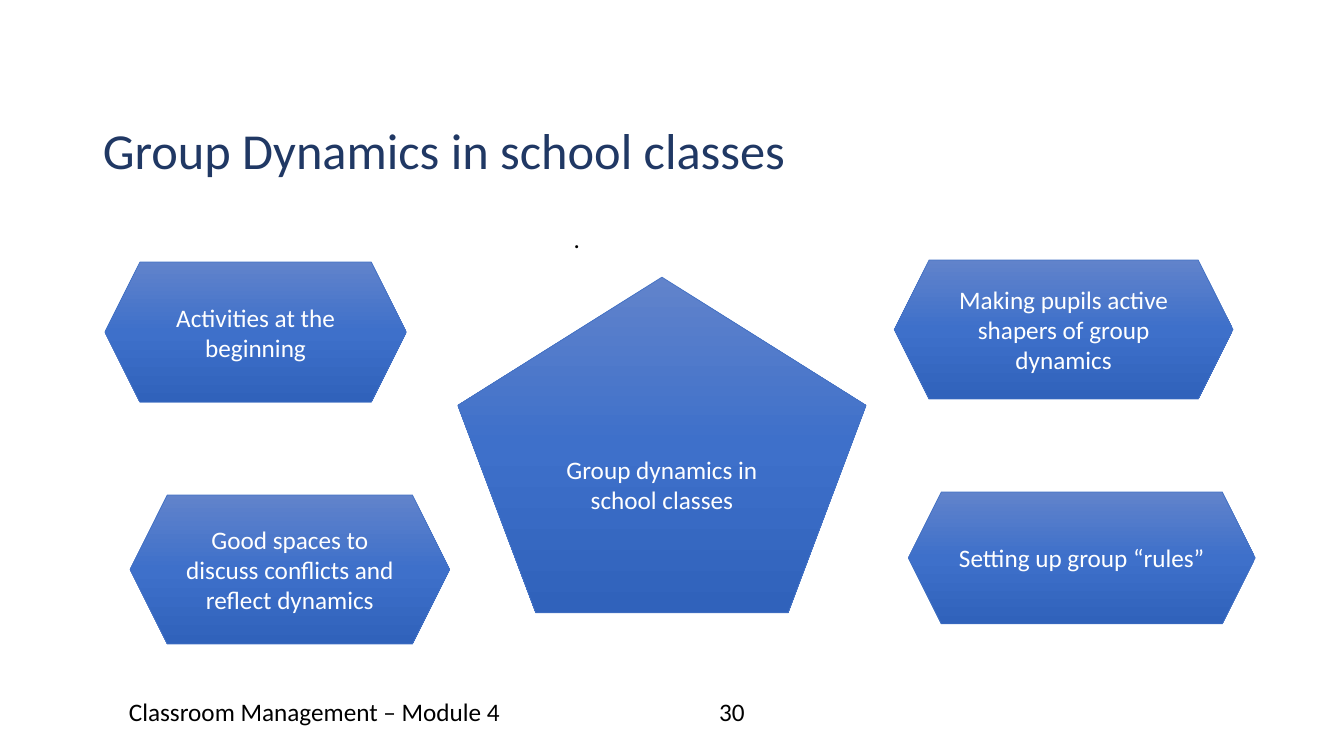
from copy import deepcopy

from pptx import Presentation
from pptx.dml.color import RGBColor
from pptx.enum.shapes import MSO_SHAPE
from pptx.enum.text import MSO_ANCHOR, MSO_AUTO_SIZE, PP_ALIGN
from pptx.util import Inches, Pt

HEXAGON = MSO_SHAPE.HEXAGON
PENTAGON = MSO_SHAPE.REGULAR_PENTAGON
LEFT, CENTER = PP_ALIGN.LEFT, PP_ALIGN.CENTER
TOP, MIDDLE = MSO_ANCHOR.TOP, MSO_ANCHOR.MIDDLE
NO_FIT = MSO_AUTO_SIZE.NONE

NAVY = RGBColor(0x20, 0x38, 0x64)
BLACK = RGBColor(0x00, 0x00, 0x00)
WHITE = RGBColor(0xFF, 0xFF, 0xFF)
OUTLINE = RGBColor(0x44, 0x72, 0xC4)
GRADIENT = [
    (0, RGBColor(0x61, 0x83, 0xCB)),
    (0.5, RGBColor(0x3E, 0x70, 0xCA)),
    (1, RGBColor(0x30, 0x62, 0xBB)),
]

TOPICS = [
    ("Activities at the beginning", (1.04, 2.6, 2.99, 1.39)),
    ("Good spaces to discuss conflicts and reflect dynamics", (1.29, 4.91, 3.17, 1.48)),
    ("Making pupils active shapers of group dynamics", (8.87, 2.58, 3.36, 1.38)),
    ("Setting up group “rules”", (9.01, 4.88, 3.44, 1.31)),
]


class SlideBuilder:
    font_name = "Calibri"
    body_size = 18

    def __init__(self, page):
        self.page = page

    def add_text(self, frame, text, color, size=body_size, align=LEFT, anchor=TOP):
        frame.word_wrap = True
        frame.auto_size = NO_FIT
        frame.vertical_anchor = anchor
        para = frame.paragraphs[0]
        para.alignment = align
        span = para.add_run()
        span.text = text
        span.font.name = self.font_name
        span.font.size = Pt(size)
        span.font.color.rgb = color
        return para

    def title(self, text, area):
        box = self.page.shapes.title
        box.left, box.top, box.width, box.height = map(Inches, area)
        self.add_text(box.text_frame, text, NAVY, size=36).line_spacing = 0.9

    def label(self, text, area, align=LEFT):
        box = self.page.shapes.add_textbox(*map(Inches, area))
        self.add_text(box.text_frame, text, BLACK, align=align)

    def topic(self, kind, text, area):
        shape = self.page.shapes.add_shape(kind, *map(Inches, area))
        shape.shadow.inherit = False
        self.shade(shape.fill)
        shape.line.color.rgb = OUTLINE
        shape.line.width = Pt(0.5)
        self.add_text(shape.text_frame, text, WHITE, align=CENTER, anchor=MIDDLE)

    def shade(self, fill):
        """Fill from top to bottom with the three gradient colours."""
        fill.gradient()
        fill.gradient_angle = 270
        first = fill.gradient_stops[0]._gs
        first.addnext(deepcopy(first))
        for stop, (position, color) in zip(fill.gradient_stops, GRADIENT):
            stop.position = position
            stop.color.rgb = color


def main():
    deck = Presentation()
    deck.slide_width, deck.slide_height = Inches(13.33), Inches(7.5)
    title_only = deck.slide_layouts[5]
    builder = SlideBuilder(deck.slides.add_slide(title_only))

    builder.title("Group Dynamics in school classes", (0.92, 1.2, 11.5, 0.97))
    builder.label("Classroom Management – Module 4", (1.18, 6.86, 4.5, 0.4))
    builder.label("30", (5.76, 6.86, 3, 0.4), CENTER)
    builder.label(".", (5.59, 2.17, 6.67, 0.4))
    builder.topic(PENTAGON, "Group dynamics in school classes", (4.54, 2.75, 4.05, 3.33))
    for text, area in TOPICS:
        builder.topic(HEXAGON, text, area)

    deck.save("out.pptx")


if __name__ == "__main__":
    main()
